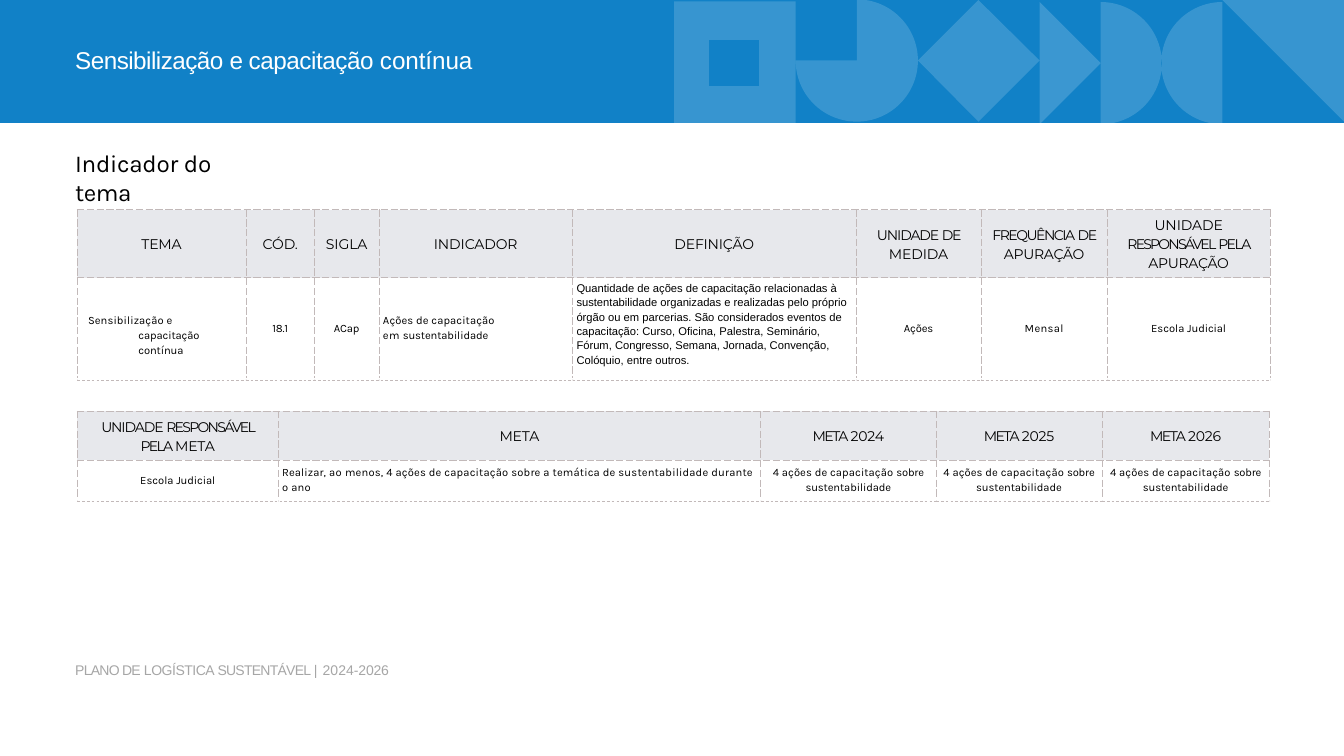
from itertools import accumulate, pairwise
from math import cos, radians, sin

from lxml.etree import SubElement
from pptx import Presentation
from pptx.dml.color import RGBColor
from pptx.enum.dml import MSO_LINE
from pptx.enum.shapes import MSO_CONNECTOR
from pptx.enum.text import MSO_ANCHOR, MSO_AUTO_SIZE, PP_ALIGN
from pptx.oxml import parse_xml
from pptx.oxml.ns import nsdecls, qn
from pptx.util import Inches, Pt

BLUE = RGBColor(0x11, 0x81, 0xC7)
WHITE = RGBColor(0xFF, 0xFF, 0xFF)
BLACK = RGBColor(0, 0, 0)
GRAY = RGBColor(0xA6, 0xA6, 0xA6)
PALE = RGBColor(0xE7, 0xE8, 0xEC)
RULE = RGBColor(0xC2, 0xB9, 0xB9)
LEFT, MID = PP_ALIGN.LEFT, PP_ALIGN.CENTER

# Content: text is a list of (words, letter spacing in points)
TITLE = [("Sensibilização ", -0.6), ("e ", -1.2), ("capacitação ", -0.5), ("contínua", -0.1)]
HEADING = [("Indicador ", -0.3), ("do ", 0), ("tema", -0.5)]
FOOTER = [("PLANO DE ", -0.8), ("LOGÍSTICA ", -0.5), ("SUSTENTÁVEL ", -0.8),
          ("| ", 0.7), ("2024-", 0), ("2026", -0.2)]
SCHOOL = [("Escola ", 0), ("Judicial", -0.1)]
GOAL = [("4 ações de capacitação ", 0.1), ("sobre ", -0.2), ("sustentabilidade", -0.1)]
DEFINITION = (
    "Quantidade de ações de capacitação relacionadas à sustentabilidade organizadas e "
    "realizadas pelo próprio órgão ou em parcerias. São considerados eventos de capacitação: "
    "Curso, Oficina, Palestra, Seminário, Fórum, Congresso, Semana, Jornada, Convenção, "
    "Colóquio, entre outros.")

# Cells: (text, format); pad is left, top, right, bottom in inches
HEAD_1 = [
    ([("TEMA", -0.2)], {}),
    ([("CÓD.", -0.2)], {}),
    ([("SIGLA", -0.1)], {}),
    ([("INDICADOR", -0.1)], {}),
    ([("DEFINIÇÃO", -0.2)], {}),
    ([("UNIDADE ", -1.2), ("DE ", -1.4), ("MEDIDA", -0.1)], {}),
    ([("FREQUÊNCIA ", -1.6), ("DE ", -1.3), ("APURAÇÃO", -0.3)], {}),
    ([("UNIDADE ", -0.1), ("RESPONSÁVEL ", -1.9), ("PELA ", -1.6), ("APURAÇÃO", -0.3)],
     {"pad": (0.15, 0, 0.15, 0)}),
]
BODY_1 = [
    ([("Sensibilização e ", 0.1), ("capacitação contínua", -0.1)],
     {"align": LEFT, "indent": (0.91, -0.75), "pad": (0, 0.22, 0.5, 0)}),
    ([("18.1", -0.2)], {}),
    ([("ACap", -0.2)], {}),
    ([("Ações de capacitação ", 0.1), ("em ", 0.3), ("sustentabilidade", -0.1)],
     {"align": LEFT, "pad": (0.06, 0, 0.9, 0)}),
    ([(DEFINITION, 0)],
     {"align": LEFT, "face": "Arial", "pad": (0.06, 0.04, 0, 0), "anchor": MSO_ANCHOR.TOP}),
    ([("Ações", -0.1)], {}),
    ([("Mensal", 0.4)], {}),
    (SCHOOL, {}),
]
HEAD_2 = [
    ([("UNIDADE ", -1.2), ("RESPONSÁVEL PELA ", -1.8), ("META", -0.2)],
     {"pad": (0.2, 0, 0.2, 0)}),
    ([("META", -0.2)], {}),
] + [([("META ", -1.6), (year, -0.2)], {}) for year in ("2024", "2025", "2026")]
BODY_2 = [
    (SCHOOL, {}),
    ([("Realizar, ", 0.1), ("ao", 0.5),
      (" menos, 4 ações de capacitação sobre a temática de sustentabilidade durante o ano", 0.2)],
     {"align": LEFT, "pad": (0.06, 0, 0.05, 0)}),
] + [(GOAL, {})] * 3

# Tables: top, bottom rule, column widths, row heights, rows, edges where the rule is split
TABLES = [
    (3.12, 5.66, [2.51, 1.02, 0.96, 2.88, 4.22, 1.86, 1.88, 2.42], [1.01, 1.49],
     [HEAD_1, BODY_1], [0, 4, 6, 7, 8]),
    (6.12, 7.46, [2.99, 7.18, 2.61, 2.47, 2.49], [0.73, 0.57],
     [HEAD_2, BODY_2], [0, 3, 4, 5]),
]
EDGE = 1.15


def write(frame, text, size=12, face="Karla", color=BLACK, align=LEFT, line=None,
          indent=(0, 0)):
    frame.word_wrap = True
    para = frame.paragraphs[0]
    para.alignment = align
    para.line_spacing = line
    props = para._p.get_or_add_pPr()
    props.set("marL", str(Inches(indent[0])))
    props.set("indent", str(Inches(indent[1])))
    for words, gap in text:
        run = para.add_run()
        run.text = words
        run.font.size = Pt(size)
        run.font.name = face
        run.font.color.rgb = color
        run._r.get_or_add_rPr().set("spc", str(round(gap * 100)))


def label(shape, box, text, top=0.01, **style):
    shape.left, shape.top, shape.width, shape.height = map(Inches, box)
    frame = shape.text_frame
    frame.margin_left = frame.margin_right = frame.margin_bottom = 0
    frame.margin_top = Inches(top)
    frame.vertical_anchor = MSO_ANCHOR.TOP
    frame.auto_size = MSO_AUTO_SIZE.NONE
    write(frame, text, indent=(0.01, 0), **style)


def outline(shapes, rings, color, alpha=None):
    rings = [[(Inches(x), Inches(y)) for x, y in ring] for ring in rings]
    pen = shapes.build_freeform(*rings[0][0])
    for i, ring in enumerate(rings):
        if i:
            pen.move_to(*ring[0])
        pen.add_line_segments(ring[1:], close=True)
    shape = pen.convert_to_shape()
    shape.shadow.inherit = False
    shape.line.fill.background()
    shape.fill.solid()
    shape.fill.fore_color.rgb = color
    if alpha:
        tint = shape._element.spPr.find(".//" + qn("a:srgbClr"))
        SubElement(tint, qn("a:alpha")).set("val", str(alpha * 1000))


def arc(x, y, r, start, end):
    return [(x + r * cos(radians(a)), y + r * sin(radians(a)))
            for a in range(start, end + 1, 3)]


def rect(x, y, w, h):
    return [(x, y), (x + w, y), (x + w, y + h), (x, y + h)]


def border(cell, last):
    props = cell._tc.get_or_add_tcPr()
    for i, side in enumerate("LRTB"):
        ink = (f'<a:solidFill><a:srgbClr val="{RULE}"/></a:solidFill><a:prstDash val="dash"/>'
               if side != "B" or not last else "<a:noFill/>")
        props.insert(i, parse_xml(
            f'<a:ln{side} {nsdecls("a")} w="{Pt(0.75)}">{ink}</a:ln{side}>'))


def grid(shapes, top, base, cols, heights, rows, splits):
    table = shapes.add_table(len(rows), len(cols), Inches(EDGE), Inches(top),
                             Inches(sum(cols)), Inches(sum(heights))).table
    table.first_row = table.horz_banding = False
    for col, width in zip(table.columns, cols):
        col.width = Inches(width)
    for r, row in enumerate(rows):
        table.rows[r].height = Inches(heights[r])
        base_style = ({"size": 15, "face": "Montserrat", "line": 1.12} if r == 0
                      else {"line": 1.15})
        for c, (text, extra) in enumerate(row):
            cell = table.cell(r, c)
            style = {"align": MID, **base_style, **extra}
            pad = style.pop("pad", (0, 0, 0, 0))
            (cell.margin_left, cell.margin_top,
             cell.margin_right, cell.margin_bottom) = map(Inches, pad)
            cell.vertical_anchor = style.pop("anchor", MSO_ANCHOR.MIDDLE)
            if r == 0:
                cell.fill.solid()
                cell.fill.fore_color.rgb = PALE
            else:
                cell.fill.background()
            border(cell, r == len(rows) - 1)
            write(cell.text_frame, text, **style)

    # Bottom rule with a small tick at each column edge
    edges = list(accumulate(cols, initial=EDGE))
    outline(shapes, [rect(x, base - 0.01, 0.01, 0.01) for x in edges], RULE)
    for a, b in pairwise(splits):
        rule = shapes.add_connector(MSO_CONNECTOR.STRAIGHT, Inches(edges[a]), Inches(base),
                                    Inches(edges[b]), Inches(base))
        rule.line.color.rgb = RULE
        rule.line.width = Pt(0.75)
        rule.line.dash_style = MSO_LINE.DASH
        SubElement(rule._element.spPr, qn("a:effectLst"))


def main():
    deck = Presentation()
    deck.slide_width, deck.slide_height = Inches(20), Inches(11.25)
    slide = deck.slides.add_slide(deck.slide_layouts[5])
    shapes = slide.shapes

    # Banner and its geometric pattern
    outline(shapes, [rect(0, 0, 20, 1.83)], BLUE)
    outline(shapes, [arc(16.38, 0.94, 0.91, -90, 90), arc(18.19, 0.94, 0.91, 90, 270),
                     [(18.19, 0), (20, 0), (20, 1.81)]], WHITE, 16)
    outline(shapes, [[(15.47, 0.03), (16.38, 0.94), (15.47, 1.85)]], WHITE, 18)
    outline(shapes, [rect(10.03, 0.02, 1.81, 1.82)], WHITE, 16)
    outline(shapes, [rect(10.55, 0.59, 0.75, 0.69)], BLUE)
    outline(shapes, [arc(12.75, 0.9, 0.91, -90, 180) + [(12.75, 0.9)],
                     [(14.56, 0), (15.47, 0.9), (14.56, 1.81), (13.66, 0.9)]], WHITE, 16)

    # Tables
    for spec in TABLES:
        grid(shapes, *spec)

    # Heading, footer, and the title in front of the banner
    label(shapes.add_textbox(0, 0, 0, 0), (1.11, 2.2, 2.87, 0.46), HEADING, size=26)
    label(shapes.add_textbox(0, 0, 0, 0), (1.11, 9.84, 4.77, 0.28), FOOTER,
          size=15, face="Arial", color=GRAY)
    title = shapes.title
    label(title, (1.11, 0.38, 8.29, 1.79), TITLE, top=0.3, size=26, face="Arial", color=WHITE)
    shapes._spTree.append(title._element)

    deck.save("out.pptx")


if __name__ == "__main__":
    main()
